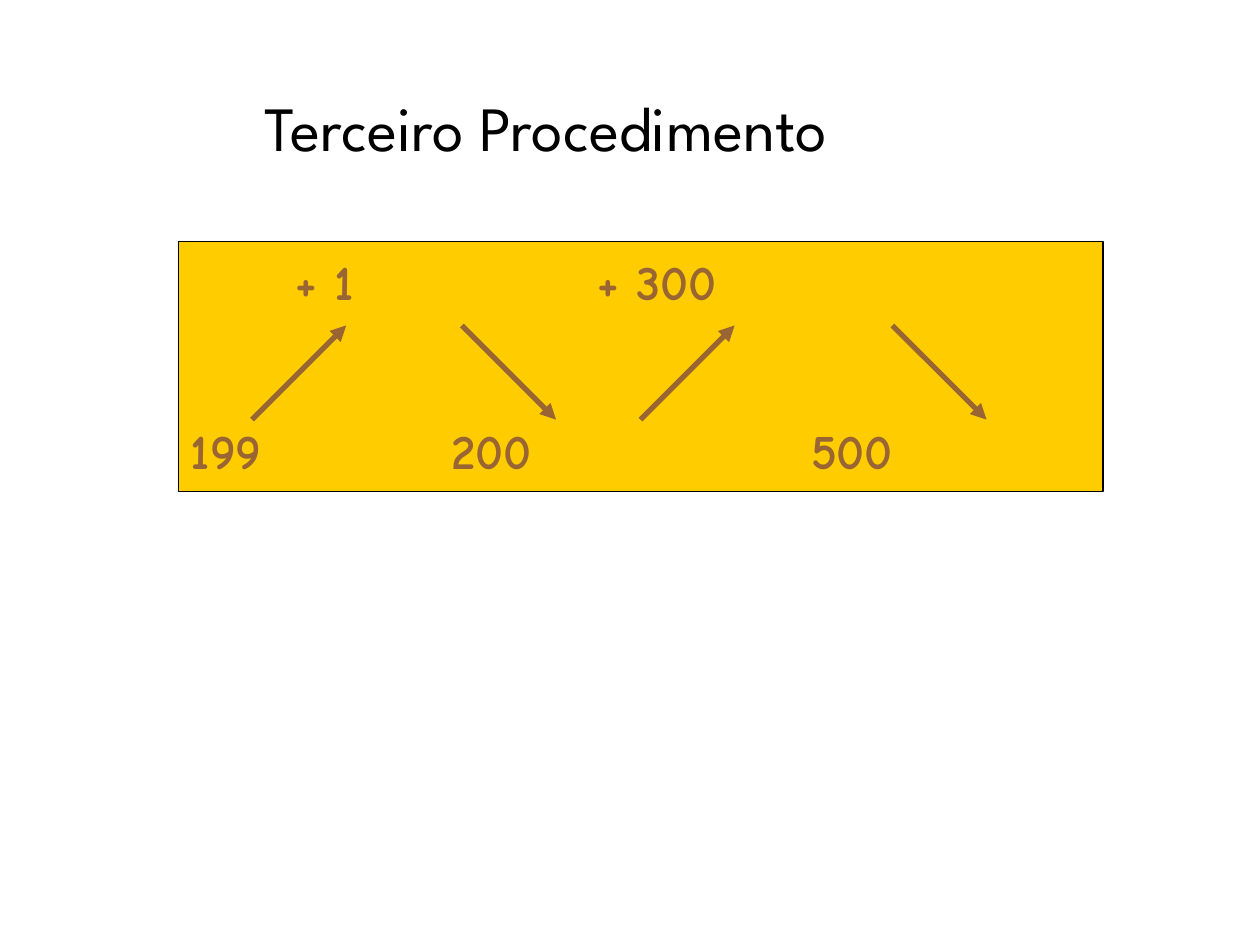
from lxml import etree
from pptx import Presentation
from pptx.dml.color import RGBColor
from pptx.enum import shapes, text
from pptx.oxml import ns
from pptx.util import Cm, Pt

# Content: each row lists (tab position in cm, label)
TITLE = "Terceiro Procedimento"
STEPS = [(2.1, "+ 1"), (8.2, "+ 300")]
NUMBERS = [(0, "199"), (5.25, "200"), (12.5, "500")]
ARROWS = [(5.08, "up"), (9.31, "down"), (12.91, "up"), (17.99, "down")]
ARROW_TOP, ARROW_SIZE = 6.56, 1.9

COLORS = {"title": "000000", "panel": "FFCC00", "border": "000000", "ink": "996633"}


def color(role):
    return RGBColor.from_string(COLORS[role])


def style(paragraph, font_name, size, role, bold=False):
    for run in paragraph.runs:
        run.font.name = font_name
        run.font.size = Pt(size)
        run.font.bold = bold
        run.font.color.rgb = color(role)


def write_row(paragraph, row):
    """Write the labels of a row, each at its own tab stop."""
    paragraph.text = "".join(("\t" if stop else "") + label for stop, label in row)
    paragraph.alignment = text.PP_ALIGN.LEFT
    tabs = etree.SubElement(paragraph._p.get_or_add_pPr(), ns.qn("a:tabLst"))
    for stop, _ in row:
        if stop:
            etree.SubElement(tabs, ns.qn("a:tab"), pos=str(Cm(stop)), algn="l")
    style(paragraph, "Comic Neue", 28, "ink", bold=True)


def add_arrow(slide, left, direction):
    bottom = ARROW_TOP + ARROW_SIZE
    start, end = (bottom, ARROW_TOP) if direction == "up" else (ARROW_TOP, bottom)
    arrow = slide.shapes.add_connector(
        shapes.MSO_CONNECTOR.STRAIGHT,
        Cm(left), Cm(start), Cm(left + ARROW_SIZE), Cm(end))
    arrow.line.color.rgb = color("ink")
    arrow.line.width = Pt(3)
    etree.SubElement(arrow.line._get_or_add_ln(), ns.qn("a:tailEnd"), type="triangle")
    etree.SubElement(arrow._element.spPr, ns.qn("a:effectLst"))


def main():
    deck = Presentation()
    deck.slide_width, deck.slide_height = Cm(25.4), Cm(19.05)
    slide = deck.slides.add_slide(deck.slide_layouts[6])

    # Title
    title = slide.shapes.add_textbox(Cm(5.08), Cm(1.9), Cm(15.45), Cm(1.55)).text_frame
    title.word_wrap = True
    title.text = TITLE
    title.paragraphs[0].alignment = text.PP_ALIGN.JUSTIFY
    title.paragraphs[0].line_spacing = 0.85
    style(title.paragraphs[0], "League Spartan", 36, "title")

    # Panel with the steps above the numbers
    panel = slide.shapes.add_shape(
        shapes.MSO_SHAPE.RECTANGLE, Cm(3.6), Cm(4.87), Cm(18.63), Cm(5.04))
    panel.shadow.inherit = False
    panel.fill.solid()
    panel.fill.fore_color.rgb = color("panel")
    panel.line.color.rgb = color("border")
    panel.line.width = Pt(1)
    frame = panel.text_frame
    frame.word_wrap = True
    frame.vertical_anchor = text.MSO_ANCHOR.TOP
    frame.margin_top = Cm(0.2)
    write_row(frame.paragraphs[0], STEPS)
    numbers = frame.add_paragraph()
    numbers.space_before = Pt(63)
    write_row(numbers, NUMBERS)

    # Arrows between steps and numbers
    for left, direction in ARROWS:
        add_arrow(slide, left, direction)

    deck.save("out.pptx")


if __name__ == "__main__":
    main()
